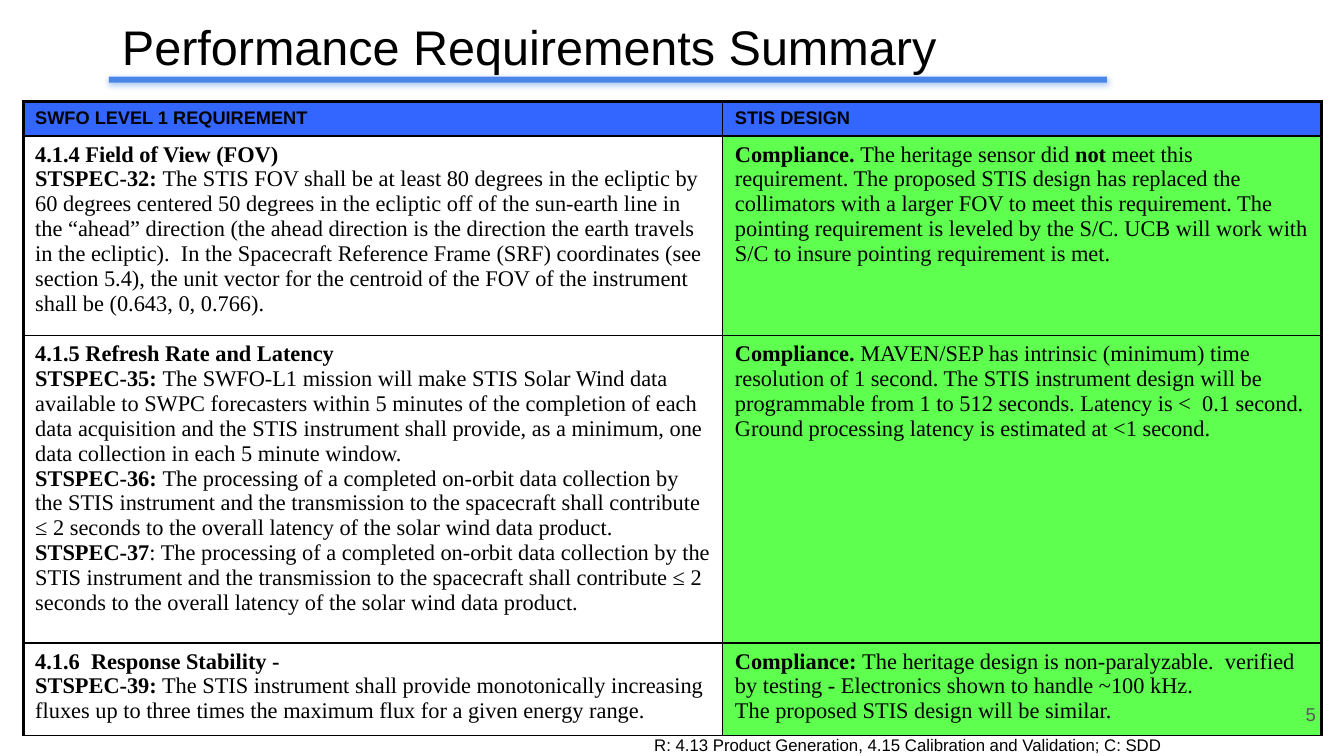
"""Build the performance requirements summary slide."""
from dataclasses import dataclass

from lxml import etree
from pptx import Presentation
from pptx import util as u
from pptx.dml.color import RGBColor
from pptx.enum import shapes, text
from pptx.oxml import ns

BLACK = RGBColor(0x00, 0x00, 0x00)
GRAY = RGBColor(0x59, 0x59, 0x59)
RULE = RGBColor(0x4A, 0x86, 0xE8)
BLUE = RGBColor(0x33, 0x66, 0xFF)
GREEN = RGBColor(0x52, 0xFF, 0x41)
THIN, THICK = 1, 2.25


@dataclass
class Label:
    words: str
    box: tuple[float, float, float, float]
    pads: tuple[float, float, float, float]
    size: float
    color: RGBColor = BLACK
    align: text.PP_ALIGN = text.PP_ALIGN.LEFT
    anchor: text.MSO_ANCHOR = text.MSO_ANCHOR.TOP
    wrap: bool = True


@dataclass
class Row:
    height: float
    need: list[str]
    design: list[str]


LABELS = [
    Label("Performance Requirements Summary", (1.08, -0.02, 10.2, 0.78),
          (0.13, 0.19, 0.13, 0), 34.7),
    Label("R: 4.13 Product Generation, 4.15 Calibration and Validation; C: SDD",
          (6.39, 7.24, 5.33, 0.3), (0.1, 0.05, 0.1, 0.05), 12, wrap=False),
    Label("5", (12.35, 6.8, 0.8, 0.57), (0.1, 0.1, 0.1, 0.1), 13.3, GRAY,
          text.PP_ALIGN.RIGHT, text.MSO_ANCHOR.MIDDLE),
]

WIDTHS = (6.94, 5.94)
ROWS = [
    Row(0.34, ["**SWFO LEVEL 1 REQUIREMENT**"], ["**STIS DESIGN**"]),
    Row(1.98, [
        "**4.1.4 Field of View (FOV)**",
        "**STSPEC-32: **The STIS FOV shall be at least 80 degrees in the ecliptic by "
        "60 degrees centered 50 degrees in the ecliptic off of the sun-earth line in "
        "the “ahead” direction (the ahead direction is the direction the earth travels "
        "in the ecliptic).  In the Spacecraft Reference Frame (SRF) coordinates (see "
        "section 5.4), the unit vector for the centroid of the FOV of the instrument "
        "shall be (0.643, 0, 0.766).",
    ], [
        "**Compliance. **The heritage sensor did **not** meet this requirement. The "
        "proposed STIS design has replaced the collimators with a larger FOV to meet "
        "this requirement. The pointing requirement is leveled by the S/C. UCB will "
        "work with S/C to insure pointing requirement is met.",
    ]),
    Row(3.05, [
        "**4.1.5 Refresh Rate and Latency**",
        "**STSPEC-35: **The SWFO-L1 mission will make STIS Solar Wind data available "
        "to SWPC forecasters within 5 minutes of the completion of each data "
        "acquisition and the STIS instrument shall provide, as a minimum, one data "
        "collection in each 5 minute window.",
        *(f"{head}The processing of a completed on-orbit data collection by the STIS "
          "instrument and the transmission to the spacecraft shall contribute ≤ 2 "
          "seconds to the overall latency of the solar wind data product."
          for head in ("**STSPEC-36: **", "**STSPEC-37**: ")),
    ], [
        "**Compliance.** MAVEN/SEP has intrinsic (minimum) time resolution of 1 "
        "second. The STIS instrument design will be programmable from 1 to 512 "
        "seconds. Latency is <  0.1 second.",
        "Ground processing latency is estimated at <1 second.",
    ]),
    Row(0.92, [
        "**4.1.6  Response Stability -**",
        "**STSPEC-39:** The STIS instrument shall provide monotonically increasing "
        "fluxes up to three times the maximum flux for a given energy range.",
    ], [
        "**Compliance: **The heritage design is non-paralyzable.  verified by testing "
        "- Electronics shown to handle ~100 kHz.",
        "The proposed STIS design will be similar.",
    ]),
]


def write(frame, lines: list[str], *, size: float, font: str = "Arial",
          color: RGBColor = BLACK, align=text.PP_ALIGN.LEFT) -> None:
    """Fill a frame with lines, setting parts between double stars in bold."""
    for i, line in enumerate(lines):
        para = frame.add_paragraph() if i else frame.paragraphs[0]
        para.alignment = align
        for j, part in enumerate(line.split("**")):
            if part:
                run = para.add_run()
                run.text = part
                run.font.size = u.Pt(size)
                run.font.name = font
                run.font.bold = j % 2 == 1
                run.font.color.rgb = color


def pad(item, pads: tuple[float, float, float, float]) -> None:
    """Set the left, top, right and bottom margins of a frame or cell."""
    for side, gap in zip(("left", "top", "right", "bottom"), pads):
        setattr(item, f"margin_{side}", u.Inches(gap))


def child(node, tag: str, **attrs: str):
    """Add a drawing element below a node."""
    return etree.SubElement(node, ns.qn(f"a:{tag}"), attrs)


def edge(cell, **sides: float) -> None:
    """Draw black cell borders with the given point widths."""
    props = cell._tc.get_or_add_tcPr()
    for side, width in sides.items():
        line = child(props, f"ln{side}", w=str(u.Pt(width)))
        child(child(line, "solidFill"), "srgbClr", val=str(BLACK))


def paint(item, color: RGBColor) -> None:
    """Give a shape or cell a solid fill."""
    item.fill.solid()
    item.fill.fore_color.rgb = color


def draw_rule(slide) -> None:
    """Draw the shadowed bar below the title."""
    bar = slide.shapes.add_shape(shapes.MSO_SHAPE.RECTANGLE,
                                 *map(u.Inches, (1.08, 0.76, 9.9, 0.06)))
    paint(bar, RULE)
    bar.line.fill.background()
    bar.shadow.inherit = False
    effect = bar._element.spPr.find(ns.qn("a:effectLst"))
    shade = child(effect, "outerShdw", blurRad=str(u.Pt(4.5)), dist=str(u.Pt(1.5)),
                  dir="5400000", algn="bl", rotWithShape="0")
    child(child(shade, "srgbClr", val=str(RULE)), "alpha", val="48000")


def draw_table(slide) -> None:
    """Draw the requirement and design table."""
    table = slide.shapes.add_table(len(ROWS), len(WIDTHS),
                                   *map(u.Inches, (0.23, 1.01, 12.88, 6.29))).table
    table.first_row = table.horz_banding = False
    for col, width in zip(table.columns, WIDTHS):
        col.width = u.Inches(width)
    for r, row in enumerate(ROWS):
        table.rows[r].height = u.Inches(row.height)
        for c, lines in enumerate((row.need, row.design)):
            cell = table.cell(r, c)
            pad(cell, (0.12, 0.06, 0.12, 0.06))
            edge(cell, L=THIN if c else THICK, R=THICK if c else THIN,
                 T=THIN if r else THICK, B=THIN)
            if r == 0:
                paint(cell, BLUE)
                write(cell.text_frame, lines, size=13)
                continue
            write(cell.text_frame, lines, size=16, font="Times New Roman")
            if c:
                paint(cell, GREEN)
                tint = cell._tc.tcPr.find(f"{ns.qn('a:solidFill')}/{ns.qn('a:srgbClr')}")
                child(tint, "alpha", val="93000")
            else:
                cell.fill.background()


def draw_label(slide, label: Label) -> None:
    """Draw one free text box."""
    frame = slide.shapes.add_textbox(*map(u.Inches, label.box)).text_frame
    frame.word_wrap = label.wrap
    frame.vertical_anchor = label.anchor
    pad(frame, label.pads)
    write(frame, [label.words], size=label.size, color=label.color, align=label.align)


def main() -> None:
    """Build and save the slide."""
    deck = Presentation()
    deck.slide_width, deck.slide_height = u.Inches(13.33), u.Inches(7.5)
    slide = deck.slides.add_slide(deck.slide_layouts[6])
    draw_rule(slide)
    draw_table(slide)
    for label in LABELS:
        draw_label(slide, label)
    deck.save("out.pptx")


if __name__ == "__main__":
    main()
